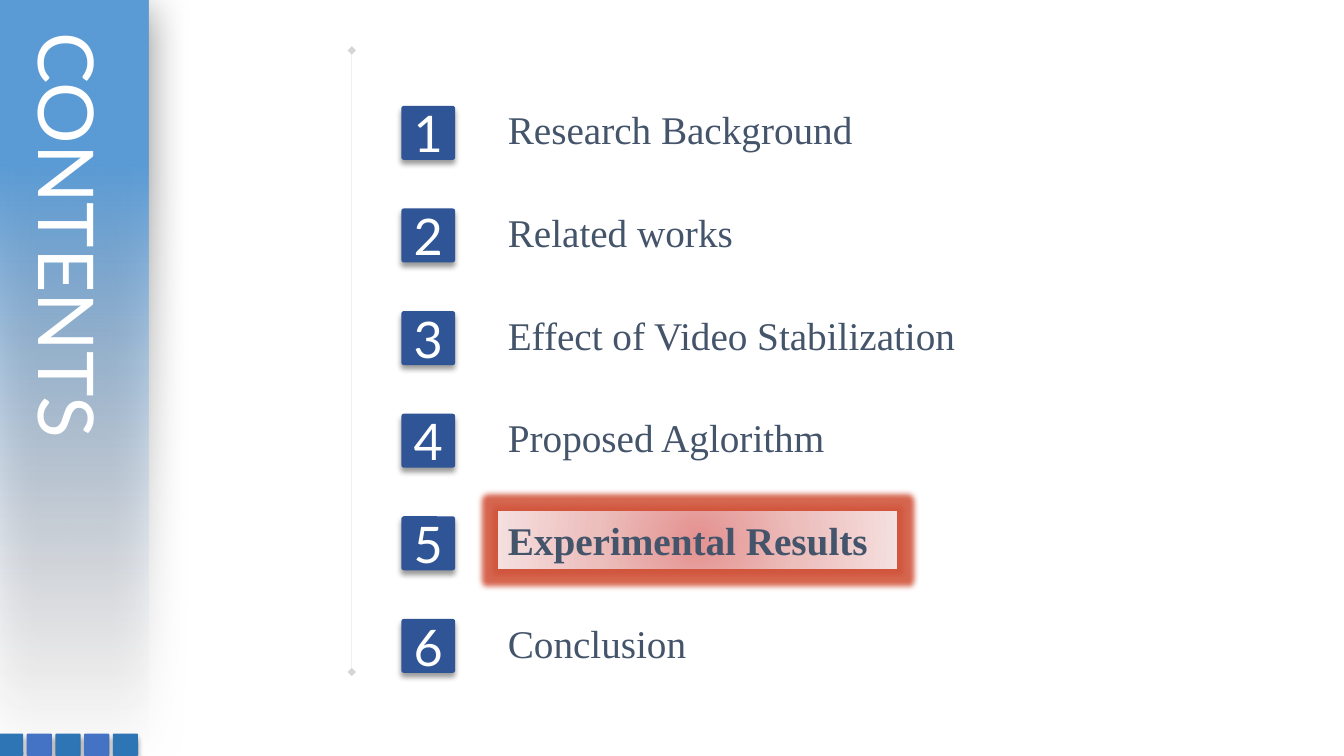
from pptx import Presentation
from pptx.dml.color import RGBColor
from pptx.enum.shapes import MSO_CONNECTOR, MSO_SHAPE
from pptx.enum.text import MSO_ANCHOR, MSO_AUTO_SIZE, PP_ALIGN
from pptx.oxml import parse_xml
from pptx.oxml.ns import nsdecls
from pptx.util import Pt

TITLE = "CONTENTS"
# Section name and width of its text box
SECTIONS = [
    ("Research Background", 285),
    ("Related works", 175.7),
    ("Effect of Video Stabilization", 345.6),
    ("Proposed Aglorithm", 255.6),
    ("Experimental Results", 285),
    ("Conclusion", 148.3),
]
CURRENT = "Experimental Results"
TILE_COLORS = ["2E75B6", "4472C4", "2E75B6", "4472C4", "2E75B6"]
NAVY, SLATE, WHITE = "2F5597", "44546A", "FFFFFF"

ROW_PITCH = 73.3
NUMBER_LEFT, NUMBER_TOP = 286.7, 75.6
NAME_LEFT, NAME_TOP = 355.7, 72
TILE_LEFT, TILE_TOP, TILE_PITCH = -1.4, 524, 20.5


def rgb(value):
    return RGBColor.from_string(value)


def set_text(sp, text, size, color, font, bold=False, align=PP_ALIGN.LEFT,
             anchor=MSO_ANCHOR.TOP, wrap=True, fit=MSO_AUTO_SIZE.NONE):
    tf = sp.text_frame
    tf.word_wrap, tf.auto_size, tf.vertical_anchor = wrap, fit, anchor
    p = tf.paragraphs[0]
    p.alignment = align
    r = p.add_run()
    r.text = text
    r.font.size, r.font.name, r.font.bold = Pt(size), font, bold
    r.font.color.rgb = rgb(color)


def add_box(kind, left, top, width, height, fill=None):
    sp = s.shapes.add_shape(kind, Pt(left), Pt(top), Pt(width), Pt(height))
    if fill:
        sp.fill.solid()
        sp.fill.fore_color.rgb = rgb(fill)
    sp.line.fill.background()
    return sp


def color_xml(color, alpha):
    return f'<a:srgbClr val="{color}"><a:alpha val="{alpha * 1000}"/></a:srgbClr>'


def add_gradient(sp, stops, direction):
    gs = "".join(f'<a:gs pos="{pos * 1000}">{color_xml(color, alpha)}</a:gs>'
                 for pos, color, alpha in stops)
    sp._element.spPr.insert(2, parse_xml(
        f'<a:gradFill {nsdecls("a")} rotWithShape="1"><a:gsLst>{gs}</a:gsLst>'
        f'{direction}</a:gradFill>'))


def add_effect(sp, effect=""):
    sp._element.spPr.append(parse_xml(
        f'<a:effectLst {nsdecls("a")}>{effect}</a:effectLst>'))


def shadow(alpha, blur, dist, angle):
    return (f'<a:outerShdw blurRad="{Pt(blur)}" dist="{Pt(dist)}" '
            f'dir="{angle * 60000}" algn="t" rotWithShape="0">'
            f'{color_xml("000000", alpha)}</a:outerShdw>')


def add_tile(left, top, width, height, fill):
    sp = add_box(MSO_SHAPE.ROUNDED_RECTANGLE, left, top, width, height, fill)
    sp.adjustments[0] = 0.05
    add_effect(sp, shadow(40, 4, 3, 90))
    return sp


prs = Presentation()
prs.slide_width, prs.slide_height = Pt(960), Pt(540)
s = prs.slides.add_slide(prs.slide_layouts[5])

# Thin vertical rule with diamond ends
rule = s.shapes.add_connector(MSO_CONNECTOR.STRAIGHT, Pt(251.3), Pt(36), Pt(251.3), Pt(480))
rule.line.width = Pt(0.25)
rule.line.color.rgb = rgb("808080")
ln = rule.line._get_or_add_ln()
ln.find(".//{*}srgbClr").append(parse_xml(f'<a:alpha {nsdecls("a")} val="33000"/>'))
for end in ("headEnd", "tailEnd"):
    ln.append(parse_xml(f'<a:{end} {nsdecls("a")} type="diamond"/>'))
add_effect(rule)

# Side panel fading out towards the bottom
panel = add_box(MSO_SHAPE.RECTANGLE, 0, 0, 105.8, 537)
add_gradient(panel, [(22, "5B9BD5", 100), (100, "FEF2F0", 0)], '<a:lin ang="5400000" scaled="0"/>')
add_effect(panel, shadow(50, 31, 6, 97))

# Tiles along the bottom edge
for i, color in enumerate(TILE_COLORS):
    add_tile(TILE_LEFT + i * TILE_PITCH, TILE_TOP, 18, 16, color)

# Vertical title, in front of the panel
title = s.shapes.title
title.left, title.top, title.width, title.height = Pt(8.6), Pt(19.4), Pt(81.4), Pt(355.7)
set_text(title, TITLE, 55, WHITE, "Lato")
title.text_frame._txBody.bodyPr.set("vert", "eaVert")
s.shapes._spTree.append(title._element)

# Numbered sections, the current one highlighted
for i, (name, width) in enumerate(SECTIONS):
    offset = i * ROW_PITCH
    number = add_tile(NUMBER_LEFT, NUMBER_TOP + offset, 38.4, 38.6, NAVY)
    set_text(number, str(i + 1), 36, WHITE, "Lato", align=PP_ALIGN.CENTER,
             anchor=MSO_ANCHOR.MIDDLE)
    current = name == CURRENT
    if current:
        label = add_box(MSO_SHAPE.RECTANGLE, NAME_LEFT, NAME_TOP + offset, width, 41.2)
        add_gradient(label, [(0, "E49290", 100), (50, "ECBEBC", 100), (100, "F5DFDF", 100)],
                     '<a:path path="circle"><a:fillToRect l="50000" t="50000" '
                     'r="50000" b="50000"/></a:path>')
        add_effect(label, f'<a:glow rad="{Pt(8)}">{color_xml("D2553C", 90)}</a:glow>')
    else:
        label = s.shapes.add_textbox(Pt(NAME_LEFT), Pt(NAME_TOP + offset), Pt(width), Pt(41.2))
    set_text(label, name, 28, SLATE, "Times New Roman", bold=current, wrap=current,
             fit=MSO_AUTO_SIZE.SHAPE_TO_FIT_TEXT)

prs.save("out.pptx")
